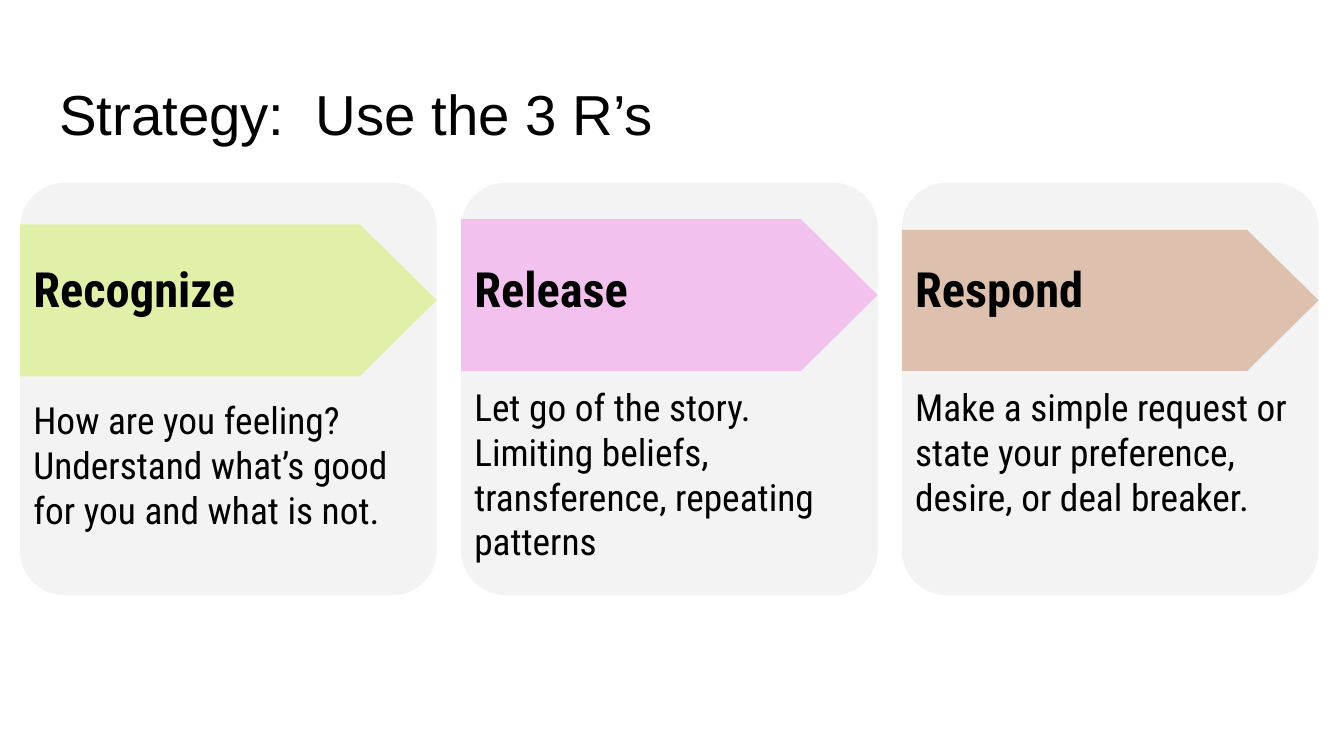
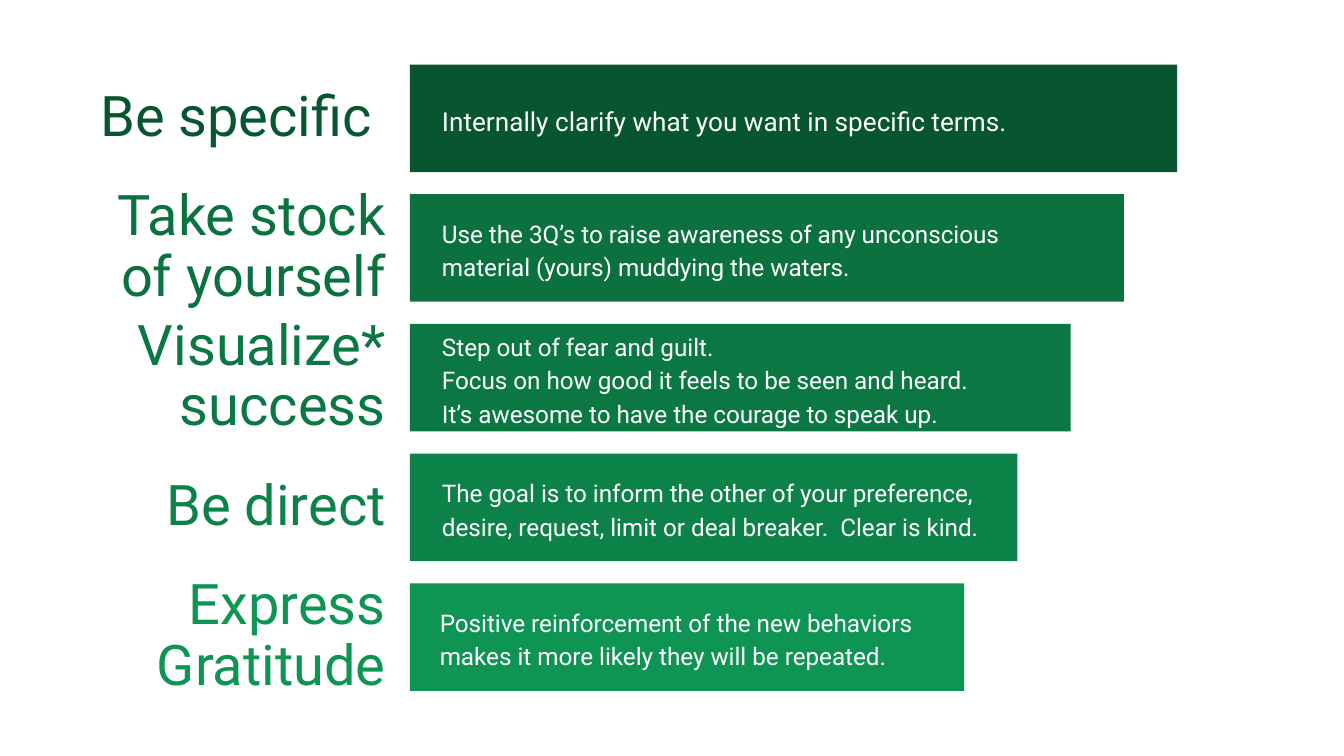
"""Build two slides: the three R's as cards, and five steps as shrinking bars."""
from pptx import Presentation
from pptx.dml.color import RGBColor as RGB
from pptx.enum.shapes import MSO_SHAPE as Shape
from pptx.enum.text import MSO_ANCHOR as Anchor, MSO_AUTO_SIZE as Fit, PP_ALIGN as Align
from pptx.util import Pt

BLACK = RGB(0x00, 0x00, 0x00)
WHITE = RGB(0xFF, 0xFF, 0xFF)
GREY = RGB(0xF3, 0xF3, 0xF3)
LIME = RGB(0xE0, 0xF0, 0xA9)
PINK = RGB(0xF3, 0xC1, 0xED)
TAN = RGB(0xDD, 0xC0, 0xAD)
GREENS = [
    RGB(0x08, 0x56, 0x30),
    RGB(0x0B, 0x71, 0x3F),
    RGB(0x0B, 0x77, 0x43),
    RGB(0x0C, 0x81, 0x48),
    RGB(0x0E, 0x94, 0x53),
]
HEAD, SLIM, WIDE = "Arial", "Roboto Condensed", "Roboto"


def block(slide, kind, rect, color, bend=None):
    form = slide.shapes.add_shape(kind, *map(Pt, rect))
    form.shadow.inherit = False
    form.fill.solid()
    form.fill.fore_color.rgb = color
    form.line.fill.background()
    if bend is not None:
        form.adjustments[0] = bend


def write(box, text, font, size, color, anchor=Anchor.TOP, pad=(7.2, 3.6, 7.2, 3.6),
          gap=1.0, align=Align.LEFT, bold=False):
    frame = box.text_frame
    frame.text = text
    frame.word_wrap = True
    frame.auto_size = Fit.NONE
    frame.vertical_anchor = anchor
    (frame.margin_left, frame.margin_top,
     frame.margin_right, frame.margin_bottom) = map(Pt, pad)
    for para in frame.paragraphs:
        para.alignment = align
        para.line_spacing = gap
        for run in para.runs:
            run.font.name = font
            run.font.size = Pt(size)
            run.font.bold = bold
            run.font.color.rgb = color


deck = Presentation()
deck.slide_width, deck.slide_height = Pt(720), Pt(405)

slide = deck.slides.add_slide(deck.slide_layouts[5])
title = slide.shapes.title
title.left, title.top, title.width, title.height = map(Pt, (24.5, 35.3, 671, 45.4))
write(title, "Strategy:  Use the 3 R’s", HEAD, 30.2, BLACK, pad=(7.2, 7.2, 7.2, 7.2))

cards = [
    ("Recognize", LIME, 120.2, 81.4, 209.5,
     "How are you feeling?\nUnderstand what’s good for you and what is not."),
    ("Release", PINK, 117.4, 81.4, 202.3,
     "Let go of the story.\nLimiting beliefs, transference, repeating patterns"),
    ("Respond", TAN, 123.1, 75.6, 202.3,
     "Make a simple request or state your preference, desire, or deal breaker."),
]
for i, (name, color, top, high, low, body) in enumerate(cards):
    left = 10.8 + 236.2 * i
    block(slide, Shape.ROUNDED_RECTANGLE, (left, 97.9, 223.2, 221), GREY, 0.108)
    block(slide, Shape.PENTAGON, (left, top, 223.2, high), color, 0.506)
    box = slide.shapes.add_textbox(*map(Pt, (left, 120.2, 211, 75.6)))
    write(box, name, SLIM, 26, BLACK, Anchor.MIDDLE, (7.2, 0, 0, 0), 0.7, bold=True)
    box = slide.shapes.add_textbox(*map(Pt, (left, low, 223.2, 307 - low)))
    write(box, body, SLIM, 20, BLACK)

slide = deck.slides.add_slide(deck.slide_layouts[6])
steps = [
    ("Be specific ", 14, 229.7, 375,
     "Internally clarify what you want in specific terms."),
    ("Take stock of yourself", 13, 229.7, 344,
     "Use the 3Q’s to raise awareness of any unconscious material (yours) "
     "muddying the waters."),
    ("Visualize* success", 13, 229.7, 303,
     "Step out of fear and guilt.\vFocus on how good it feels to be seen and heard.\v"
     "It’s awesome to have the courage to speak up."),
    ("Be direct", 13, 229.7, 303,
     "The goal is to inform the other of your preference, desire, request, limit "
     "or deal breaker.  Clear is kind."),
    ("Express Gratitude", 13, 228.5, 276,
     "Positive reinforcement of the new behaviors makes it more likely they will "
     "be repeated."),
]
for i, (name, size, left, wide, body) in enumerate(steps):
    top = 34.6 + 69.5 * i
    box = slide.shapes.add_textbox(*map(Pt, (35.3, top + 3.8, 178.5, 49.7)))
    write(box, name, WIDE, 30, GREENS[i], Anchor.MIDDLE, gap=0.9, align=Align.RIGHT)
    block(slide, Shape.RECTANGLE, (219.6, top, 411 - 28.5 * i, 57.6), GREENS[i])
    box = slide.shapes.add_textbox(*map(Pt, (left, top + 15.8, wide, 26)))
    write(box, body, WIDE, size, WHITE, Anchor.MIDDLE, gap=1.15)

deck.save("out.pptx")
